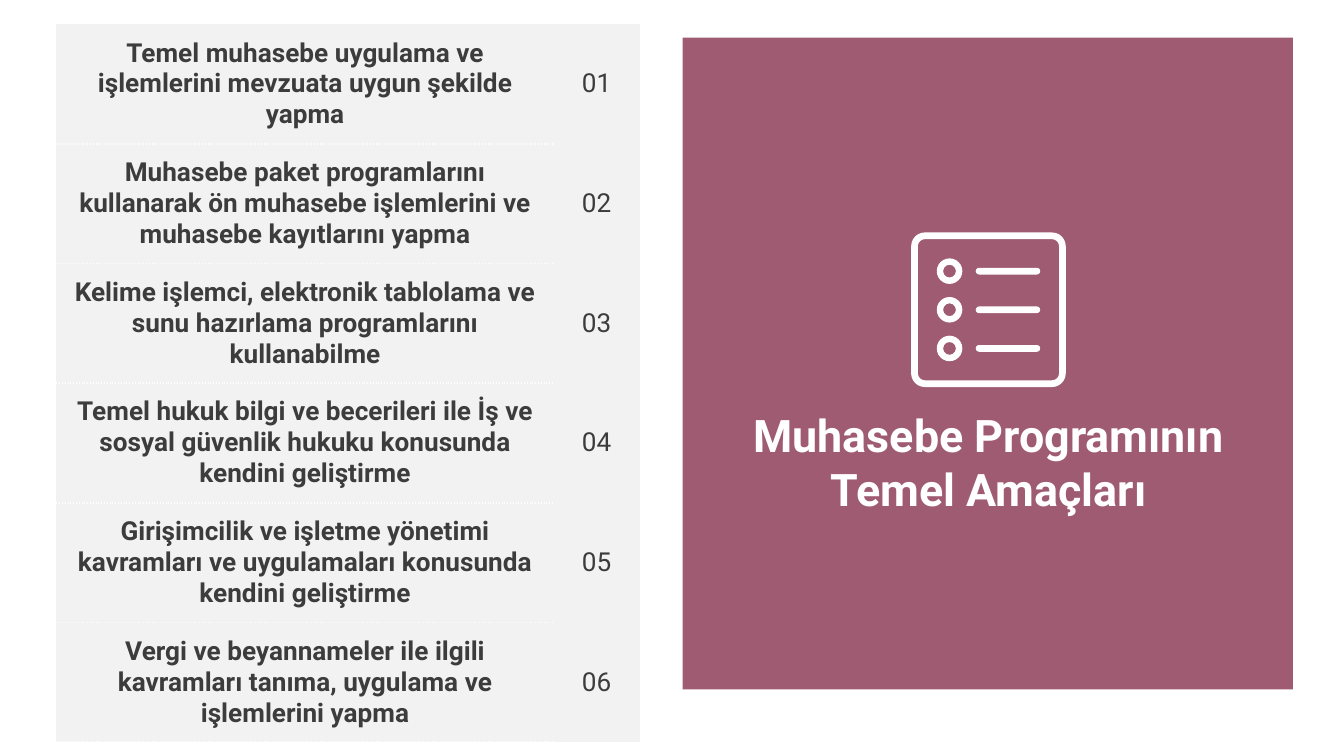
from pptx import Presentation
from pptx.dml.color import RGBColor
from pptx.enum.shapes import MSO_SHAPE
from pptx.enum.text import MSO_ANCHOR, MSO_AUTO_SIZE, PP_ALIGN
from pptx.oxml import parse_xml
from pptx.oxml.ns import nsdecls, qn
from pptx.util import Inches, Pt

RECT, ROUNDED, DONUT = MSO_SHAPE.RECTANGLE, MSO_SHAPE.ROUNDED_RECTANGLE, MSO_SHAPE.DONUT
MIDDLE, CENTER = MSO_ANCHOR.MIDDLE, PP_ALIGN.CENTER
GROW = MSO_AUTO_SIZE.SHAPE_TO_FIT_TEXT

PLUM = RGBColor(0x9F, 0x5B, 0x72)
WHITE = RGBColor(0xFF, 0xFF, 0xFF)
LIGHT_GRAY = RGBColor(0xF2, 0xF2, 0xF2)
DARK_GRAY = RGBColor(0x3C, 0x3C, 0x3C)
FONT = "Roboto"
PLAIN_TABLE_STYLE = "{2D5ABB26-0587-4C30-8999-92F81FD0307C}"

SLIDE_W = 10
SLIDE_H = SLIDE_W * 9 / 16
GOAL_COLUMNS = (3.7, 0.64)
MIN_ROW_H, TABLE_H = 0.48, 5.4
STROKE = 0.05
ICON_LEFT, ICON_TOP, ICON_SIZE = 6.78, 1.73, 1.15
ENTRY_PITCH = ICON_SIZE / 4

TITLE = "Muhasebe Programının Temel Amaçları"
GOALS = (
    "Temel muhasebe uygulama ve işlemlerini mevzuata uygun şekilde yapma",
    "Muhasebe paket programlarını kullanarak ön muhasebe işlemlerini ve muhasebe kayıtlarını yapma",
    "Kelime işlemci, elektronik tablolama ve sunu hazırlama programlarını kullanabilme",
    "Temel hukuk bilgi ve becerileri ile İş ve sosyal güvenlik hukuku konusunda kendini geliştirme",
    "Girişimcilik ve işletme yönetimi kavramları ve uygulamaları konusunda kendini geliştirme",
    "Vergi ve beyannameler ile ilgili kavramları tanıma, uygulama ve işlemlerini yapma",
)


def inches(*lengths):
    return [Inches(length) for length in lengths]


def add_filled(shapes, kind, box, color, roundness=None):
    shape = shapes.add_shape(kind, *inches(*box))
    shape.shadow.inherit = False
    shape.fill.solid()
    shape.fill.fore_color.rgb = color
    shape.line.fill.background()
    if roundness is not None:
        shape.adjustments[0] = roundness
    return shape


def write_text(frame, text, size, color, bold):
    frame.text = text
    frame.word_wrap = True
    paragraph = frame.paragraphs[0]
    paragraph.alignment = CENTER
    font = paragraph.font
    font.name, font.size, font.bold = FONT, Pt(size), bold
    font.color.rgb = color


def add_dotted_border(cell, side):
    border = parse_xml(
        f'<a:{side} {nsdecls("a")} w="{Pt(1)}"><a:solidFill><a:srgbClr val="{WHITE}"/>'
        f'</a:solidFill><a:prstDash val="sysDot"/></a:{side}>')
    properties = cell._tc.get_or_add_tcPr()
    fill = properties.find(qn("a:solidFill"))
    fill.addprevious(border)


def fill_cell(cell, text, bold):
    cell.fill.solid()
    cell.fill.fore_color.rgb = LIGHT_GRAY
    cell.vertical_anchor = MIDDLE
    cell.margin_left = cell.margin_right = Inches(0.1)
    cell.margin_top = cell.margin_bottom = Inches(0.1)
    write_text(cell.text_frame, text, 14, DARK_GRAY, bold)


def add_goal_table(slide):
    """Add the numbered goals; rows grow from their minimum height to fit the text."""
    box = (0.42, 0.18, sum(GOAL_COLUMNS), TABLE_H)
    goal_frame = slide.shapes.add_table(len(GOALS), len(GOAL_COLUMNS), *inches(*box))
    table = goal_frame.table
    table.first_row = table.horz_banding = False
    table._tbl.tblPr.find(qn("a:tableStyleId")).text = PLAIN_TABLE_STYLE
    for column, width in zip(table.columns, GOAL_COLUMNS):
        column.width = Inches(width)
    for row, goal in enumerate(GOALS):
        table.rows[row].height = Inches(MIN_ROW_H)
        goal_cell = table.cell(row, 0)
        fill_cell(goal_cell, goal, True)
        fill_cell(table.cell(row, 1), f"{row + 1:02}", False)
        if row > 0:
            add_dotted_border(goal_cell, "lnT")
        add_dotted_border(goal_cell, "lnB")
    goal_frame.height = Inches(TABLE_H)


def add_list_icon(slide):
    """Draw a rounded frame holding three ring-and-bar entries."""
    icon = slide.shapes.add_group_shape().shapes
    side = ICON_SIZE - STROKE
    frame = add_filled(icon, ROUNDED, (ICON_LEFT + STROKE / 2, ICON_TOP + STROKE / 2, side, side),
                       WHITE, 0.07)
    frame.fill.background()
    frame.line.color.rgb = WHITE
    frame.line.width = Inches(STROKE)
    ring = 0.19
    for entry in range(3):
        middle = ICON_TOP + ENTRY_PITCH * (entry + 1)
        add_filled(icon, DONUT, (ICON_LEFT + 0.19, middle - ring / 2, ring, ring), WHITE, 0.25)
        add_filled(icon, ROUNDED, (ICON_LEFT + 0.48, middle - STROKE / 2, 0.48, STROKE), WHITE, 0.5)


def add_title(slide):
    frame = slide.shapes.add_textbox(*inches(5.52, 3.03, 3.67, 0.81)).text_frame
    frame.margin_left = frame.margin_right = frame.margin_top = frame.margin_bottom = 0
    frame.vertical_anchor = MIDDLE
    frame.auto_size = GROW
    write_text(frame, TITLE, 24, WHITE, True)


def main():
    deck = Presentation()
    deck.slide_width, deck.slide_height = inches(SLIDE_W, SLIDE_H)
    slide = deck.slides.add_slide(deck.slide_layouts[6])
    add_filled(slide.shapes, RECT, (5.08, 0.28, 4.54, 4.85), PLUM)
    add_goal_table(slide)
    add_list_icon(slide)
    add_title(slide)
    deck.save("out.pptx")


if __name__ == "__main__":
    main()
